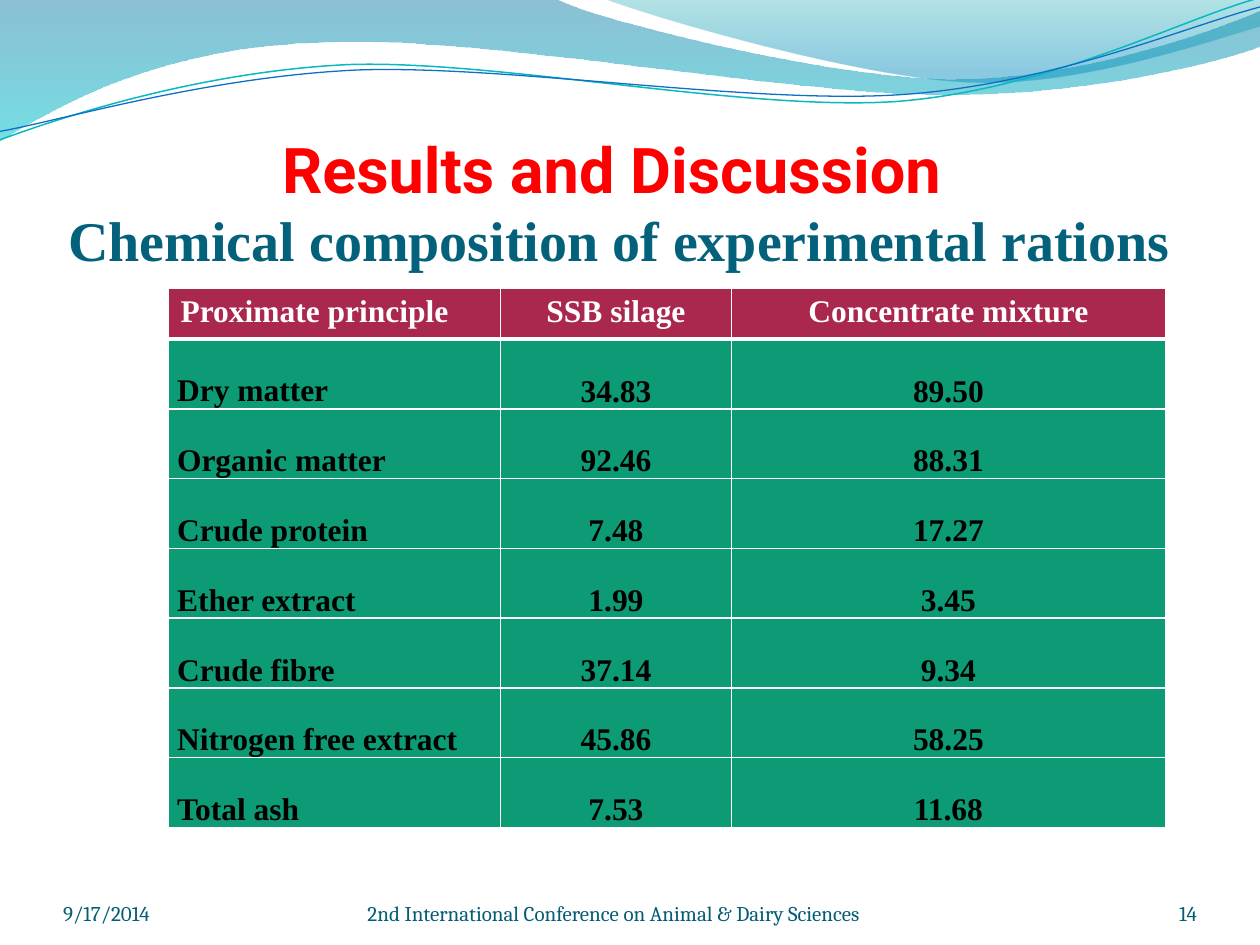
from dataclasses import dataclass

from lxml.etree import SubElement
from pptx import Presentation
from pptx.dml.color import RGBColor
from pptx.enum.text import MSO_ANCHOR, MSO_AUTO_SIZE, PP_ALIGN
from pptx.oxml.ns import qn
from pptx.util import Pt


@dataclass(frozen=True)
class Theme:
    heading: str = "FF0000"
    subheading: str = "04617B"
    footer: str = "045D75"
    header_fill: str = "AA284D"
    body_fill: str = "0C9B74"
    white: str = "FFFFFF"
    black: str = "000000"
    heading_font: str = "Roboto"
    text_font: str = "Times New Roman"
    footer_font: str = "Cambria"
    heading_size: float = 36
    subheading_size: float = 32
    table_size: float = 18
    footer_size: float = 12


@dataclass(frozen=True)
class Stop:
    position: float
    color: str
    opacity: int


@dataclass(frozen=True)
class Wave:
    """Each segment is a corner (x, y) or a curve (x1, y1, x2, y2, x, y)."""
    start: tuple[float, float]
    segments: tuple[tuple[float, ...], ...]
    stops: tuple[Stop, ...] = ()
    line_color: str = ""
    line_width: float = 0
    rotation: float = 0


@dataclass(frozen=True)
class FooterItem:
    text: str
    left: float
    width: float
    align: PP_ALIGN


THEME = Theme()

WAVES = (
    Wave((0, 0), ((317, -1), (343, 12, 478, 45, 546, 45), (614, 45, 690, 19, 720, 6),
                  (721, 26), (708, 32, 626, 55, 537, 54), (448, 54, 275, 20, 185, 24),
                  (93, 26, 33, 60, -1, 81)),
         stops=(Stop(0, "0074A1", 45), Stop(1, "00C6CF", 55))),
    Wave((345, -1), ((367, 8, 491, 45, 554, 47), (616, 50, 692, 23, 720, 15), (720, 0)),
         stops=(Stop(0, "00A1A9", 30), Stop(0.8, "008BBF", 45))),
    Wave((-1.4, 63), ((34.2, 51.7, 114.3, 29.4, 199.4, 29.4),
                      (284.4, 30.5, 425.8, 67.2, 512, 65.2),
                      (599.3, 62.3, 676, 25.9, 720.6, 16)),
         line_color="0AB8BF", line_width=0.85, rotation=357.3),
    Wave((-1.1, 58.1), ((33.2, 53.7, 118.2, 32.6, 204.3, 32.7),
                        (290.3, 33.7, 429.1, 63.3, 515.3, 61.4),
                        (601.4, 59.4, 679, 30, 721.4, 21)),
         line_color="0F6FC6", line_width=0.75, rotation=357.3),
)

COMPOSITION = (
    ("Proximate principle", "SSB silage", "Concentrate mixture"),
    ("Dry matter", "34.83", "89.50"),
    ("Organic matter", "92.46", "88.31"),
    ("Crude protein", "7.48", "17.27"),
    ("Ether extract", "1.99", "3.45"),
    ("Crude fibre", "37.14", "9.34"),
    ("Nitrogen free extract", "45.86", "58.25"),
    ("Total ash", "7.53", "11.68"),
)
COLUMN_WIDTHS = (190, 132, 248)
ROW_HEIGHT = 29.2  # rows grow to fit their double-spaced text
TABLE_HEIGHT = 332

FOOTER = (
    FooterItem("9/17/2014", 36, 168, PP_ALIGN.LEFT),
    FooterItem("2nd International Conference on Animal & Dairy Sciences", 210, 324, PP_ALIGN.LEFT),
    FooterItem("14", 624, 60, PP_ALIGN.RIGHT),
)


def style_run(run, font: str, size: float, color: str, bold: bool = False) -> None:
    run.font.name = font
    run.font.size = Pt(size)
    run.font.bold = bold
    run.font.color.rgb = RGBColor.from_string(color)


def set_margins(box, left: float, top: float, right: float, bottom: float) -> None:
    box.margin_left, box.margin_top = Pt(left), Pt(top)
    box.margin_right, box.margin_bottom = Pt(right), Pt(bottom)


def bend(shape, wave: Wave) -> None:
    """Join each three straight steps of a curved segment into one cubic curve."""
    steps = iter(list(shape._element.iter(qn("a:lnTo"))))
    for segment in wave.segments:
        parts = [next(steps) for _ in range(len(segment) // 2)]
        if len(parts) == 3:
            curve = SubElement(parts[0].getparent(), qn("a:cubicBezTo"))
            parts[0].addprevious(curve)
            for part in parts:
                curve.append(part[0])
                part.getparent().remove(part)


def draw_wave(slide, wave: Wave) -> None:
    points = [(Pt(x), Pt(y)) for segment in wave.segments
              for x, y in zip(segment[::2], segment[1::2])]
    builder = slide.shapes.build_freeform(*map(Pt, wave.start), scale=1.0)
    builder.add_line_segments(points, close=bool(wave.stops))
    shape = builder.convert_to_shape()
    bend(shape, wave)
    shape.rotation = wave.rotation
    shape.shadow.inherit = False
    if not wave.stops:
        shape.fill.background()
        shape.line.color.rgb = RGBColor.from_string(wave.line_color)
        shape.line.width = Pt(wave.line_width)
        return
    shape.line.fill.background()
    shape.fill.gradient()
    shape.fill.gradient_angle = 270
    for target, stop in zip(shape.fill.gradient_stops, wave.stops):
        target.position = stop.position
        target.color.rgb = RGBColor.from_string(stop.color)
    for color, stop in zip(shape._element.spPr.iter(qn("a:srgbClr")), wave.stops):
        SubElement(color, qn("a:alpha"), val=str(stop.opacity * 1000))


def draw_title(slide) -> None:
    title = slide.shapes.title
    title.left, title.top, title.width, title.height = Pt(30), Pt(60), Pt(648), Pt(96)
    frame = title.text_frame
    frame.word_wrap = True
    frame.auto_size = MSO_AUTO_SIZE.NONE
    frame.vertical_anchor = MSO_ANCHOR.BOTTOM
    set_margins(frame, 0, 3.6, 0, 0)
    heading = frame.paragraphs[0]
    heading.text = "Results and Discussion \vChemical composition of experimental rations"
    heading.alignment = PP_ALIGN.CENTER
    first, second = heading.runs
    style_run(first, THEME.heading_font, THEME.heading_size, THEME.heading, True)
    style_run(second, THEME.text_font, THEME.subheading_size, THEME.subheading, True)
    # The line break must not be taller than the heading
    line_break = heading._p.find(qn("a:br"))
    SubElement(line_break, qn("a:rPr"), sz=str(THEME.heading_size * 100))


def set_borders(cell, bottom: float) -> None:
    properties = cell._tc.get_or_add_tcPr()
    for index, (side, width) in enumerate((("L", 1), ("R", 1), ("T", 1), ("B", bottom))):
        border = SubElement(properties, qn(f"a:ln{side}"), w=str(Pt(width)))
        fill = SubElement(border, qn("a:solidFill"))
        SubElement(fill, qn("a:srgbClr"), val=THEME.white)
        properties.insert(index, border)


def draw_cell(cell, text: str, is_header: bool, is_label: bool) -> None:
    cell.fill.solid()
    cell.fill.fore_color.rgb = RGBColor.from_string(
        THEME.header_fill if is_header else THEME.body_fill)
    paragraph = cell.text_frame.paragraphs[0]
    paragraph.text = text
    paragraph.alignment = PP_ALIGN.LEFT if is_label else PP_ALIGN.CENTER
    if not is_header:
        paragraph.line_spacing = 2.0
        set_margins(cell, 5.2, 0, 5.2, 0)
        cell.vertical_anchor = MSO_ANCHOR.TOP if is_label else MSO_ANCHOR.BOTTOM
    style_run(paragraph.runs[0], THEME.text_font, THEME.table_size,
              THEME.white if is_header else THEME.black, True)
    set_borders(cell, 3 if is_header else 1)


def draw_composition(slide) -> None:
    composition = slide.shapes.add_table(len(COMPOSITION), len(COLUMN_WIDTHS), Pt(96), Pt(164.5),
                                         Pt(sum(COLUMN_WIDTHS)), Pt(TABLE_HEIGHT))
    table = composition.table
    for column, width in zip(table.columns, COLUMN_WIDTHS):
        column.width = Pt(width)
    for r, values in enumerate(COMPOSITION):
        table.rows[r].height = Pt(ROW_HEIGHT)
        for c, value in enumerate(values):
            draw_cell(table.cell(r, c), value, r == 0, c == 0)
    composition.height = Pt(TABLE_HEIGHT)


def draw_footer_item(slide, item: FooterItem) -> None:
    frame = slide.shapes.add_textbox(Pt(item.left), Pt(500.5), Pt(item.width), Pt(28.5)).text_frame
    frame.word_wrap = True
    frame.vertical_anchor = MSO_ANCHOR.BOTTOM
    set_margins(frame, 0, 0, 0, 0)
    frame.text = item.text
    frame.paragraphs[0].alignment = item.align
    style_run(frame.paragraphs[0].runs[0], THEME.footer_font, THEME.footer_size, THEME.footer)


def main() -> None:
    deck = Presentation()
    deck.slide_width, deck.slide_height = Pt(720), Pt(540)
    slide = deck.slides.add_slide(deck.slide_layouts[5])
    # Decorative waves along the top
    for wave in WAVES:
        draw_wave(slide, wave)
    # Title, table and footer
    draw_title(slide)
    draw_composition(slide)
    for item in FOOTER:
        draw_footer_item(slide, item)
    deck.save("out.pptx")


if __name__ == "__main__":
    main()
